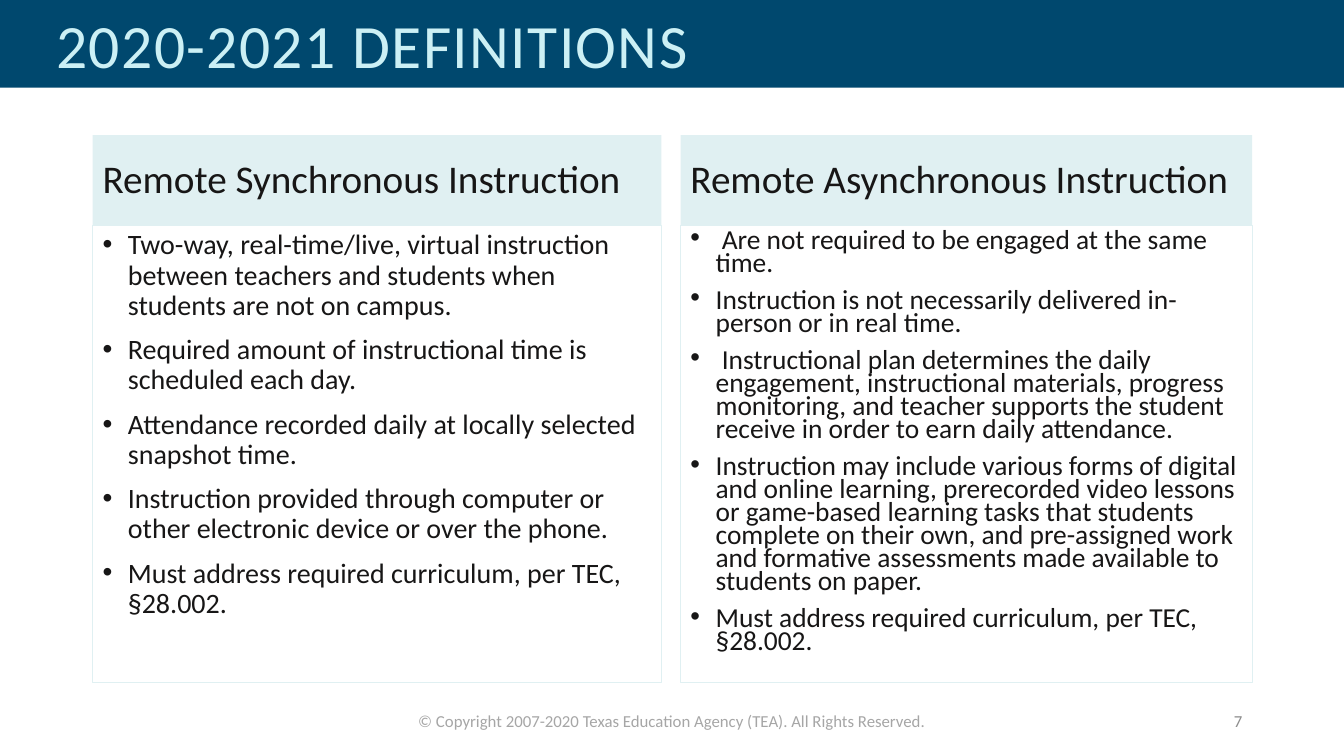
from lxml import etree
from pptx import Presentation
from pptx.dml.color import RGBColor
from pptx.enum.shapes import MSO_SHAPE
from pptx.enum.text import MSO_ANCHOR, PP_ALIGN
from pptx.oxml.ns import qn
from pptx.util import Inches, Pt

RECTANGLE = MSO_SHAPE.RECTANGLE
TOP, MIDDLE = MSO_ANCHOR.TOP, MSO_ANCHOR.MIDDLE
LEFT, CENTER, RIGHT = PP_ALIGN.LEFT, PP_ALIGN.CENTER, PP_ALIGN.RIGHT
FONT = "Calibri"
COLORS = {
    "banner": "00486E",
    "title": "CCF0F5",
    "panel": "E0F0F2",
    "ink": "171616",
    "footer": "A6A6A6",
    "number": "8C8C8C",
}
WIDTH, HEIGHT = 13.33, 7.5
BANNER_HEIGHT = 0.87
PANEL_TOP, PANEL_HEIGHT, HEADING_HEIGHT = 1.34, 5.43, 0.9
INDENT = 0.25

SYNCHRONOUS = [
    "Two-way, real-time/live, virtual instruction between teachers and students "
    "when students are not on campus.",
    "Required amount of instructional time is scheduled each day.",
    "Attendance recorded daily at locally selected snapshot time.",
    "Instruction provided through computer or other electronic device or over the phone.",
    "Must address required curriculum, per TEC, §28.002.",
]
ASYNCHRONOUS = [
    " Are not required to be engaged at the same time.",
    "Instruction is not necessarily delivered in-person or in real time.",
    " Instructional plan determines the daily engagement, instructional materials, "
    "progress monitoring, and teacher supports the student receive in order to earn "
    "daily attendance.",
    "Instruction may include various forms of digital and online learning, prerecorded "
    "video lessons or game-based learning tasks that students complete on their own, "
    "and pre-assigned work and formative assessments made available to students on paper.",
    "Must address required curriculum, per TEC, §28.002.",
]


def color(name):
    """Return the named colour."""
    return RGBColor.from_string(COLORS[name])


def add_rectangle(slide, box, fill=None, line=None):
    """Add a flat rectangle with an optional fill and outline."""
    shape = slide.shapes.add_shape(RECTANGLE, *map(Inches, box))
    shape.shadow.inherit = False
    if fill:
        shape.fill.solid()
        shape.fill.fore_color.rgb = color(fill)
    else:
        shape.fill.background()
    if line:
        shape.line.color.rgb = color(line)
        shape.line.width = Pt(0.75)
    else:
        shape.line.fill.background()
    return shape


def add_bullet(para):
    """Give a paragraph a round bullet with a hanging indent."""
    properties = para._p.get_or_add_pPr()
    properties.set("marL", str(Inches(INDENT)))
    properties.set("indent", str(-Inches(INDENT)))
    etree.SubElement(properties, qn("a:buFont")).set("typeface", "Arial")
    etree.SubElement(properties, qn("a:buChar")).set("char", "•")


def write(shape, lines, size, ink, anchor=MIDDLE, align=LEFT, spacing=1.0,
          bullets=False, wrap=True):
    """Fill a shape with styled paragraphs."""
    frame = shape.text_frame
    frame.word_wrap = wrap
    frame.vertical_anchor = anchor
    frame.text = "\n".join(lines)
    for index, para in enumerate(frame.paragraphs):
        para.alignment = align
        para.line_spacing = spacing
        para.space_before = Pt(10 if index else 0)
        if bullets:
            add_bullet(para)
        for run in para.runs:
            run.font.name = FONT
            run.font.size = Pt(size)
            run.font.color.rgb = color(ink)


def add_banner(slide, box, title):
    """Draw the title banner across the given box."""
    left, top, width, height = box
    add_rectangle(slide, box, fill="banner")
    title_box = slide.shapes.add_textbox(
        *map(Inches, (left + 0.46, top + 0.05, width - 1.83, height)))
    write(title_box, [title], 44, "title", spacing=0.9)
    for run in title_box.text_frame.paragraphs[0].runs:
        run.font._element.set("spc", "100")


def add_definition(slide, box, heading, points, size, spacing):
    """Draw a heading band above an outlined bullet list."""
    left, top, width, height = box
    band = add_rectangle(slide, (left, top, width, HEADING_HEIGHT), fill="panel")
    write(band, [heading], 28, "ink", spacing=0.9)
    body_box = (left, top + HEADING_HEIGHT, width, height - HEADING_HEIGHT)
    body = add_rectangle(slide, body_box, line="panel")
    write(body, points, size, "ink", anchor=TOP, spacing=spacing, bullets=True)


def add_footer(slide, box, notice, number):
    """Place the copyright line and the page number."""
    left, top, width, height = box
    notice_box = slide.shapes.add_textbox(
        *map(Inches, (left + (width - 5.24) / 2, top + 0.05, 5.24, 0.3)))
    write(notice_box, [notice], 12, "footer", anchor=TOP, align=CENTER, wrap=False)
    number_box = slide.shapes.add_textbox(
        *map(Inches, (left + width - 3.91, top, 3, height)))
    write(number_box, [number], 12, "number", align=RIGHT)


def main():
    """Build the definitions slide and save the deck."""
    deck = Presentation()
    deck.slide_width, deck.slide_height = Inches(WIDTH), Inches(HEIGHT)
    page = deck.slides.add_slide(deck.slide_layouts[6])
    add_banner(page, (0, 0, WIDTH, BANNER_HEIGHT), "2020-2021 DEFINITIONS")
    add_definition(page, (0.92, PANEL_TOP, 5.64, PANEL_HEIGHT),
                   "Remote Synchronous Instruction", SYNCHRONOUS, 20, 0.9)
    add_definition(page, (6.75, PANEL_TOP, 5.67, PANEL_HEIGHT),
                   "Remote Asynchronous Instruction", ASYNCHRONOUS, 19.6, 0.7)
    add_footer(page, (0, 6.95, WIDTH, 0.4),
               "© Copyright 2007-2020 Texas Education Agency (TEA). All Rights Reserved.", "7")
    deck.save("out.pptx")


if __name__ == "__main__":
    main()
